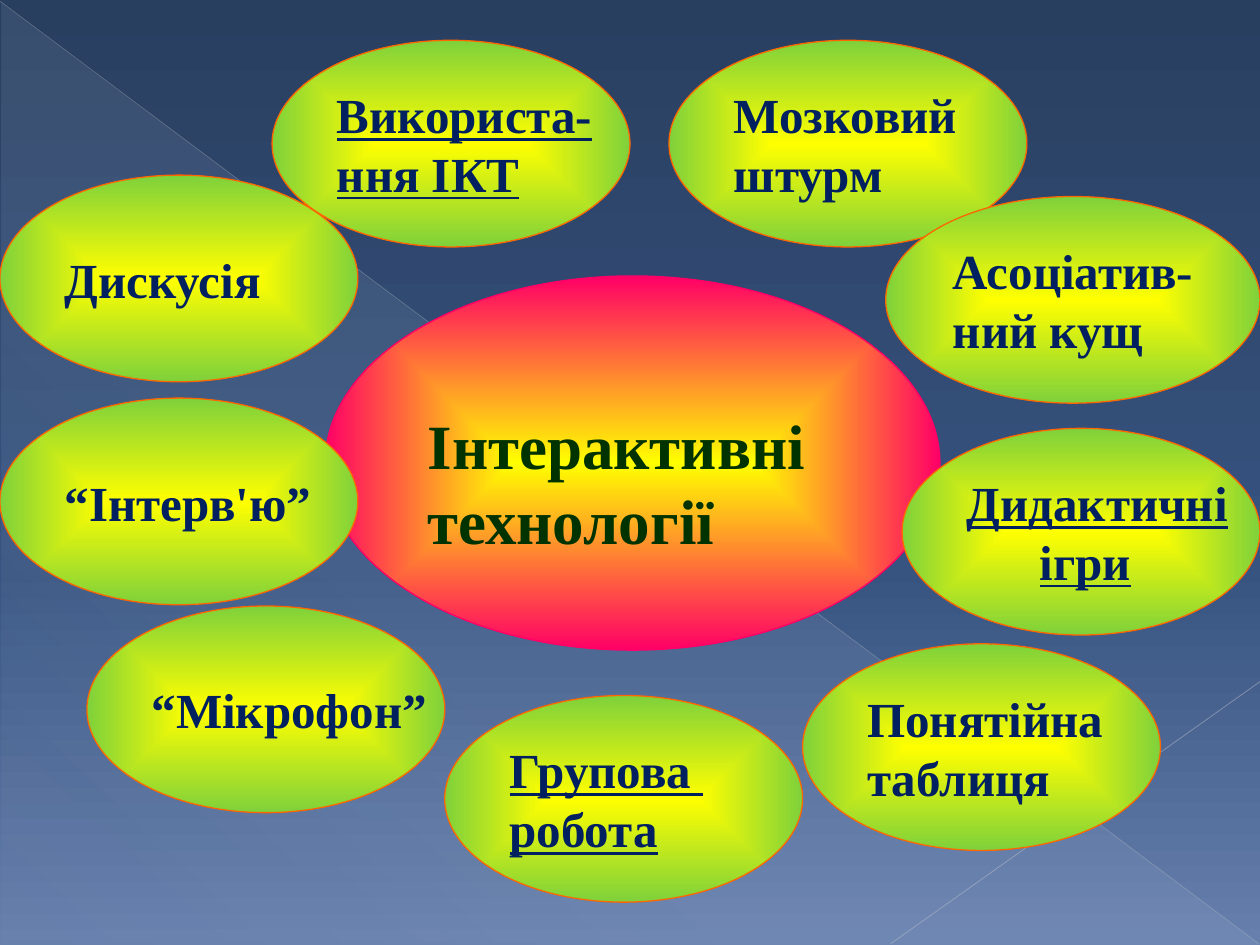
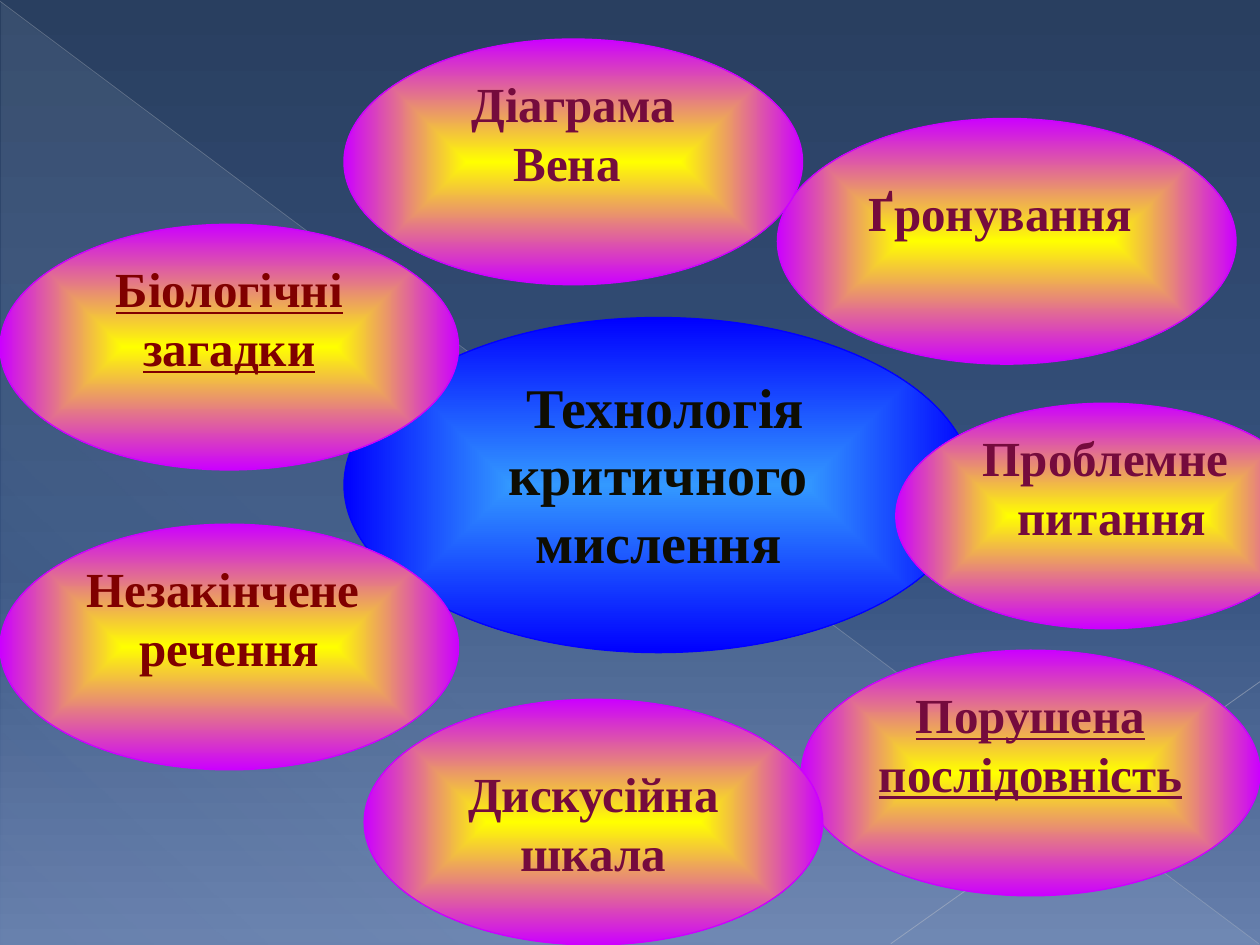
from lxml.etree import SubElement
from pptx import Presentation
from pptx.dml.color import RGBColor
from pptx.enum.shapes import MSO_CONNECTOR, MSO_SHAPE
from pptx.enum.text import MSO_ANCHOR, PP_ALIGN
from pptx.oxml.ns import qn
from pptx.util import Pt

PX = 9144  # 100 px to the inch
FONT = "Times New Roman"
C = {
    "night": "293F60", "dusk": "375380", "haze": "667FAC", "beam": "D6ECFF",
    "ray_long": "B7BCC5", "ray_short": "BFC3CB",
    "yellow": "FFFF00", "pink": "FF0066", "lime": "7FD13B", "orange": "FF6600",
    "sky": "3399FF", "blue": "0000FF", "violet": "CC00FF",
    "forest": "003300", "navy": "002060", "ink": "0E0D02",
    "plum": "750B3D", "maroon": "800000",
}

# Looks of the ovals: fill centre, fill edge, line, text colour, size, alignment
LOOKS = {
    "interactive": ("yellow", "pink", "pink", "forest", 36, PP_ALIGN.JUSTIFY),
    "method": ("yellow", "lime", "orange", "navy", 28, PP_ALIGN.LEFT),
    "critical": ("sky", "blue", "blue", "ink", 32, PP_ALIGN.CENTER),
    "plum": ("yellow", "violet", "violet", "plum", 28, PP_ALIGN.CENTER),
    "maroon": ("yellow", "violet", "violet", "maroon", 28, PP_ALIGN.CENTER),
}
TOP, MID = MSO_ANCHOR.TOP, MSO_ANCHOR.MIDDLE
TAB = 58     # tab stop of an indented second line
LIFT = 52    # bottom inset that raises text by half a line

# look, box, lines, underline, anchor, top inset, bottom inset
SLIDES = [
    [("interactive", (258, 219, 488, 297), ["Інтерактивні", "технології"], False, TOP, 60, 5)]
    + [("method", box, lines, underline, MID, 5, 5) for box, lines, underline in [
        ((0, 139, 284, 164), ["Дискусія"], False),
        ((0, 316, 284, 164), ["“Інтерв'ю”"], False),
        ((216, 32, 284, 164), ["Використа-", "ння ІКТ"], True),
        ((531, 32, 284, 164), ["Мозковий", "штурм"], False),
        ((703, 156, 297, 164), ["Асоціатив-", "ний кущ"], False),
        ((69, 481, 284, 164), ["“Мікрофон”"], False),
        ((353, 552, 284, 164), ["Групова ", "робота"], True),
        ((637, 511, 284, 164), ["Понятійна", "таблиця"], False),
        ((716, 340, 284, 164), ["Дидактичні", "\tігри"], True),
    ]],
    [("critical", (273, 252, 499, 266), [" Технологія критичного мислення"], False, TOP, 5, 5)]
    + [(look, box, lines, underline, MID, 5, bottom) for look, box, lines, underline, bottom in [
        ("plum", (617, 94, 364, 195), ["Ґронування "], False, LIFT),
        ("plum", (636, 516, 364, 195), ["Порушена", "послідовність"], True, LIFT),
        ("plum", (289, 555, 364, 195), ["Дискусійна", "шкала"], False, 5),
        ("maroon", (0, 416, 364, 195), ["Незакінчене ", "речення"], False, LIFT),
        ("plum", (273, 31, 364, 195), ["Діаграма", "Вена "], False, LIFT),
        ("maroon", (0, 178, 364, 195), ["Біологічні", "загадки"], True, LIFT),
        ("plum", (711, 320, 333, 179), ["Проблемне", " питання"], False, LIFT),
    ]],
]


def set_gradient(fill, props, stops, angle=None):
    """Fill with (position, colour, opacity) stops, from the centre if no angle."""
    fill.gradient()
    grad = props.find(qn("a:gradFill"))
    for child in list(grad):
        grad.remove(child)
    gs_lst = SubElement(grad, qn("a:gsLst"))
    for pos, color, opacity in stops:
        gs = SubElement(gs_lst, qn("a:gs"), pos=str(pos * 1000))
        clr = SubElement(gs, qn("a:srgbClr"), val=C[color])
        if opacity < 100:
            SubElement(clr, qn("a:alpha"), val=str(opacity * 1000))
    if angle is None:
        path = SubElement(grad, qn("a:path"), path="shape")
        SubElement(path, qn("a:fillToRect"), {side: "50000" for side in "ltrb"})
    else:
        SubElement(grad, qn("a:lin"), ang=str(angle * 60000), scaled="0")


def add_oval(s, look, box, lines, underline, anchor, top, bottom):
    centre, edge, line, color, size, align = LOOKS[look]
    sp = s.shapes.add_shape(MSO_SHAPE.OVAL, *(v * PX for v in box))
    sp.shadow.inherit = False
    set_gradient(sp.fill, sp._element.spPr, [(0, centre, 100), (100, edge, 100)])
    sp.line.color.rgb = RGBColor.from_string(C[line])
    sp.line.width = Pt(0.75)
    tf = sp.text_frame
    frame = {"word_wrap": anchor == TOP, "vertical_anchor": anchor,
             "margin_left": 10 * PX, "margin_right": 10 * PX,
             "margin_top": top * PX, "margin_bottom": bottom * PX}
    for name, value in frame.items():
        setattr(tf, name, value)
    for i, text in enumerate(lines):
        p = tf.paragraphs[0] if i == 0 else tf.add_paragraph()
        p.alignment = align
        if text.startswith("\t"):
            tabs = SubElement(p._p.get_or_add_pPr(), qn("a:tabLst"))
            SubElement(tabs, qn("a:tab"), pos=str(TAB * PX), algn="l")
        r = p.add_run()
        r.text = text
        font = {"name": FONT, "size": Pt(size), "bold": True, "underline": underline}
        for name, value in font.items():
            setattr(r.font, name, value)
        r.font.color.rgb = RGBColor.from_string(C[color])


prs = Presentation()
prs.slide_width, prs.slide_height = 1000 * PX, 750 * PX

# Shared background
master = prs.slide_master
bg_fill = master.background.fill
bg_fill.solid()
set_gradient(bg_fill, master._element.find(".//" + qn("p:bgPr")),
             [(0, "night", 100), (60, "dusk", 100), (100, "haze", 100)], 90)

for ovals in SLIDES:
    s = prs.slides.add_slide(prs.slide_layouts[6])

    # Pale triangle across the lower left half
    sp = s.shapes.add_shape(MSO_SHAPE.RIGHT_TRIANGLE, 1 * PX, 2 * PX, 999 * PX, 748 * PX)
    sp.shadow.inherit = False
    sp.line.fill.background()
    set_gradient(sp.fill, sp._element.spPr,
                 [(0, "beam", 10), (70, "beam", 8), (100, "beam", 1)], 133)

    # Thin rays
    for ends, color, width, opacity in [((0, 1, 999, 749), "ray_long", 0.39, 35),
                                        ((1000, 541, 707, 749), "ray_short", 0.47, 45)]:
        ray = s.shapes.add_connector(MSO_CONNECTOR.STRAIGHT, *(v * PX for v in ends))
        ray.line.color.rgb = RGBColor.from_string(C[color])
        ray.line.width = Pt(width)
        spPr = ray._element.spPr
        SubElement(spPr.find(".//" + qn("a:srgbClr")), qn("a:alpha"), val=str(opacity * 1000))
        SubElement(spPr, qn("a:effectLst"))

    # Central topic and the methods around it
    for oval in ovals:
        add_oval(s, *oval)

prs.save("out.pptx")
